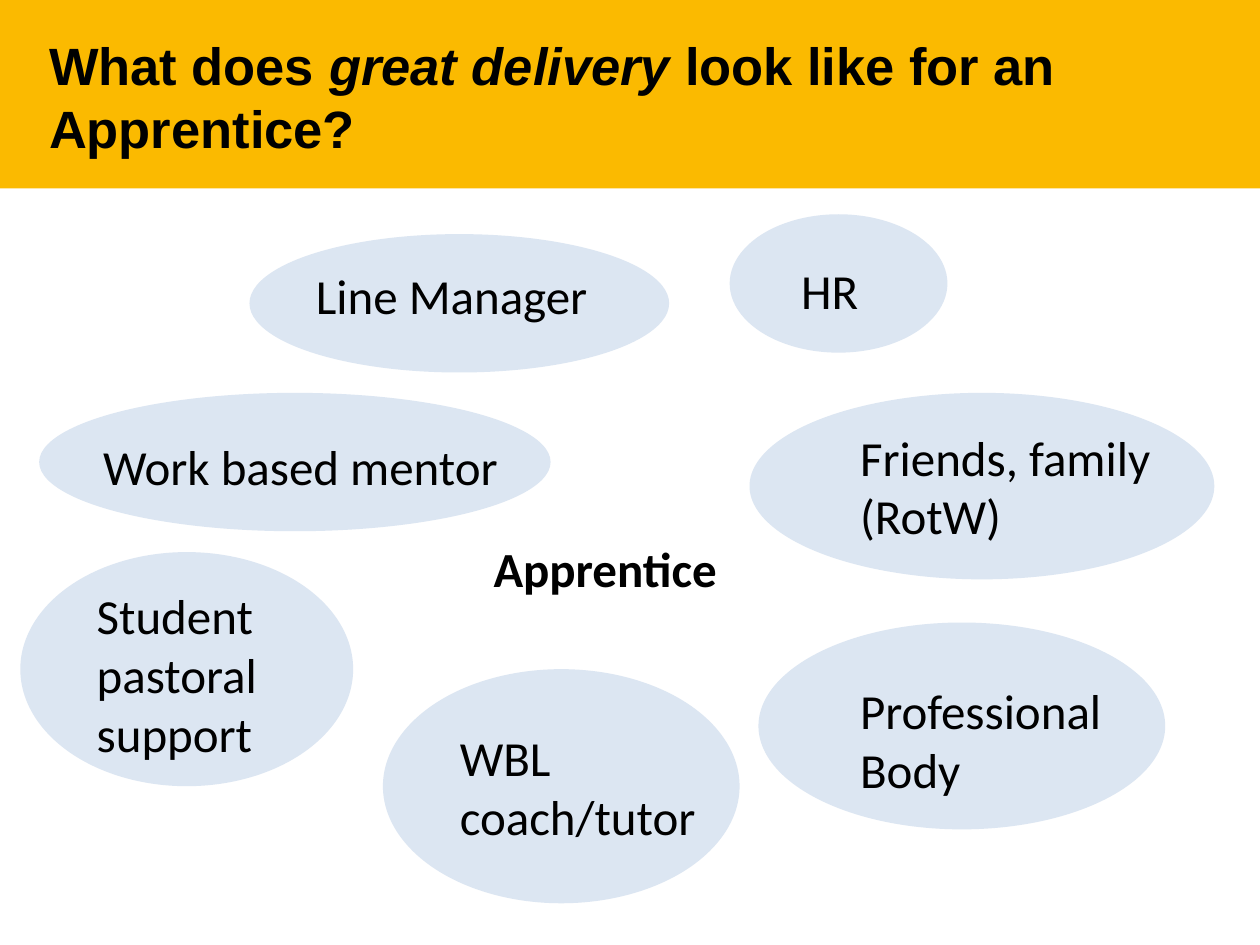
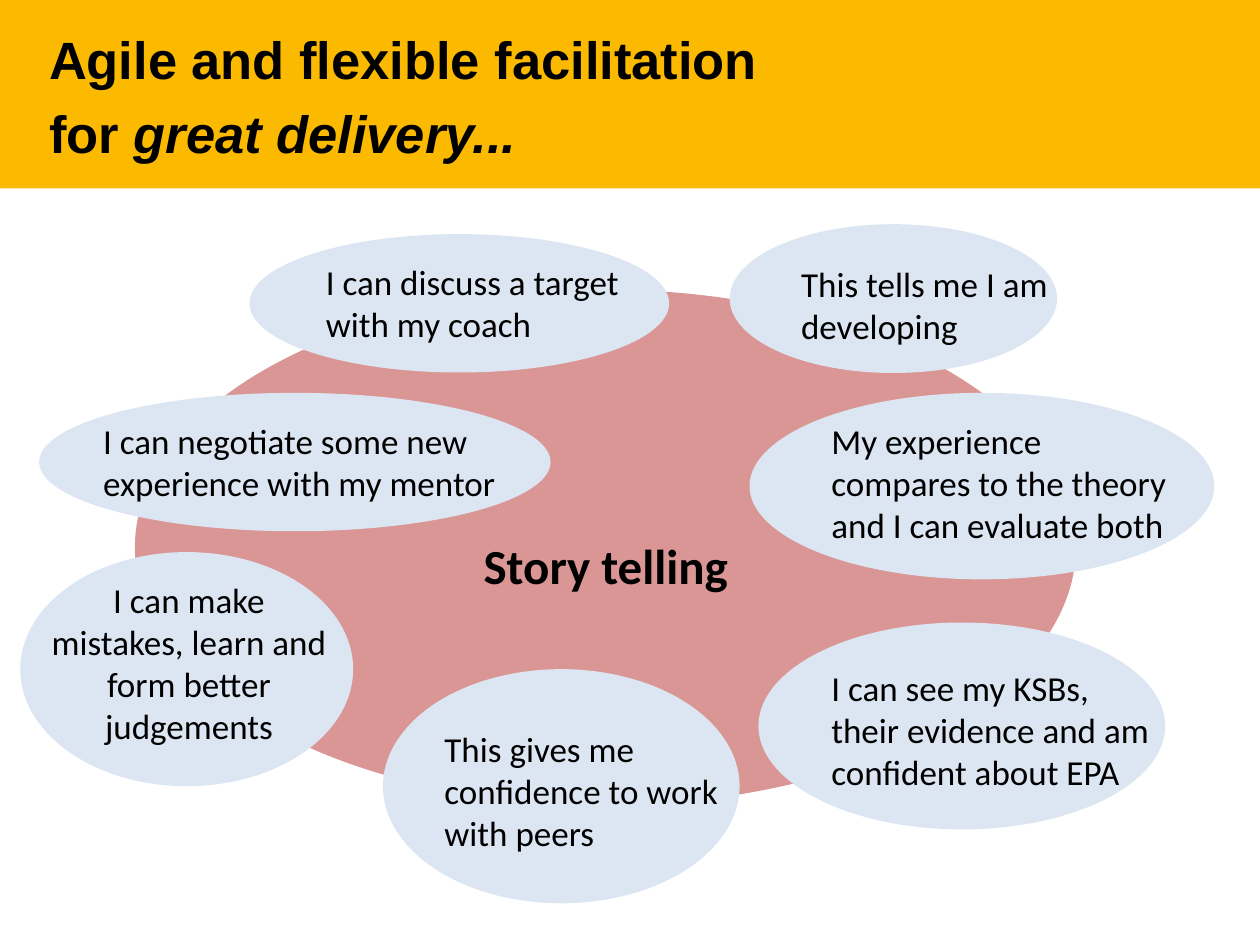
from dataclasses import dataclass
from itertools import chain

from pptx import Presentation
from pptx.dml.color import RGBColor
from pptx.enum.shapes import MSO_SHAPE
from pptx.enum.text import MSO_ANCHOR, PP_ALIGN
from pptx.util import Cm, Pt

RECTANGLE, OVAL = MSO_SHAPE.RECTANGLE, MSO_SHAPE.OVAL
TOP, MIDDLE = MSO_ANCHOR.TOP, MSO_ANCHOR.MIDDLE
LEFT, CENTER = PP_ALIGN.LEFT, PP_ALIGN.CENTER


@dataclass(frozen=True)
class Theme:
    band: RGBColor = RGBColor(0xFB, 0xBA, 0x00)
    bubble: RGBColor = RGBColor(0xDC, 0xE6, 0xF2)
    story: RGBColor = RGBColor(0xD9, 0x96, 0x94)
    ink: RGBColor = RGBColor(0x00, 0x00, 0x00)
    title_font: str = "Arial"
    body_font: str = "Calibri"
    title_size: int = 30
    label_size: int = 28
    statement_size: int = 20


theme = Theme()


def fill_area(slide, outline, area, color):
    shape = slide.shapes.add_shape(outline, *map(Cm, area))
    shape.shadow.inherit = False
    shape.fill.solid()
    shape.fill.fore_color.rgb = color
    shape.line.fill.background()


def write(slide, text, area, *, size, font=theme.body_font, bold=False,
          align=LEFT, anchor=TOP, inset=(0.25, 0.13), space_before=0):
    """Newlines split paragraphs; asterisks enclose italics."""
    frame = slide.shapes.add_textbox(*map(Cm, area)).text_frame
    frame.word_wrap = True
    frame.vertical_anchor = anchor
    frame.margin_left = frame.margin_right = Cm(inset[0])
    frame.margin_top = frame.margin_bottom = Cm(inset[1])
    for index, line in enumerate(text.split("\n")):
        paragraph = frame.add_paragraph() if index else frame.paragraphs[0]
        paragraph.alignment = align
        paragraph.space_before = Pt(space_before)
        for position, part in enumerate(line.split("*")):
            if part:
                run = paragraph.add_run()
                run.text = part
                run.font.name = font
                run.font.size = Pt(size)
                run.font.bold = bold
                run.font.italic = position % 2 == 1
                run.font.color.rgb = theme.ink


shared_bubbles = [
    (15.11, 7.92, 9.37, 3.76),
    (15.29, 12.55, 8.2, 4.17),
    (7.72, 13.49, 7.19, 4.72),
    (0.41, 11.13, 6.71, 4.72),
    (0.79, 7.92, 10.31, 2.79),
    (5.03, 4.72, 8.46, 2.79),
]

people = [
    ("Line Manager", (6.12, 5.23, 7.37, 1.45), LEFT),
    ("Friends, family (RotW)", (17.09, 8.48, 6.4, 2.64), LEFT),
    ("HR", (15.9, 5.13, 2.31, 1.45), LEFT),
    ("WBL coach/tutor", (9.02, 14.53, 6.27, 2.64), LEFT),
    ("Work based mentor", (1.83, 8.66, 8.86, 1.45), LEFT),
    ("Student\npastoral support", (1.7, 11.68, 5.41, 3.84), LEFT),
    ("Professional Body", (17.09, 13.59, 6.27, 2.64), LEFT),
]

statements = [
    ("I can discuss a target with my coach", (6.32, 5.13, 7.37, 1.96), LEFT),
    ("My experience compares to the theory and I can evaluate both",
     (16.51, 8.33, 7.59, 2.82), LEFT),
    ("This tells me I am developing", (15.9, 5.16, 7.01, 1.96), LEFT),
    ("This gives me confidence to work with peers",
     (8.71, 14.53, 6.27, 2.82), LEFT),
    ("I can negotiate some new experience with my mentor",
     (1.83, 8.33, 8.86, 1.96), LEFT),
    ("I can make mistakes, learn and form better judgements",
     (0.71, 11.53, 6.2, 3.68), CENTER),
    ("I can see my KSBs, their evidence and am confident about EPA",
     (16.51, 13.31, 7.01, 2.82), LEFT),
]

pages = [
    dict(title="What does *great delivery* look like for an Apprentice?",
         backdrop=None, top_right_bubble=(14.71, 4.32, 4.39, 2.79),
         centre=("Apprentice", (9.7, 10.72, 5.79, 1.45)),
         notes=people, size=theme.label_size),
    dict(title="Agile and flexible facilitation\nfor *great delivery...*",
         backdrop=(2.72, 5.84, 18.97, 10.39),
         top_right_bubble=(14.71, 4.52, 6.6, 3),
         centre=("Story telling", (9.5, 10.67, 6.2, 1.45)),
         notes=statements, size=theme.statement_size),
]

deck = Presentation()
deck.slide_width, deck.slide_height = Cm(25.4), Cm(19.05)

for page in pages:
    slide = deck.slides.add_slide(deck.slide_layouts[6])
    fill_area(slide, RECTANGLE, (0, 0, 25.4, 3.8), theme.band)
    if page["backdrop"]:
        fill_area(slide, OVAL, page["backdrop"], theme.story)
    for bubble in chain(shared_bubbles, [page["top_right_bubble"]]):
        fill_area(slide, OVAL, bubble, theme.bubble)
    write(slide, *page["centre"], size=theme.label_size, bold=True)
    for text, area, align in page["notes"]:
        write(slide, text, area, size=page["size"], align=align)
    write(slide, page["title"], (0.99, 0.33, 23.44, 3.2),
          size=theme.title_size, font=theme.title_font, bold=True,
          anchor=MIDDLE, inset=(0, 0), space_before=6)

deck.save("out.pptx")
